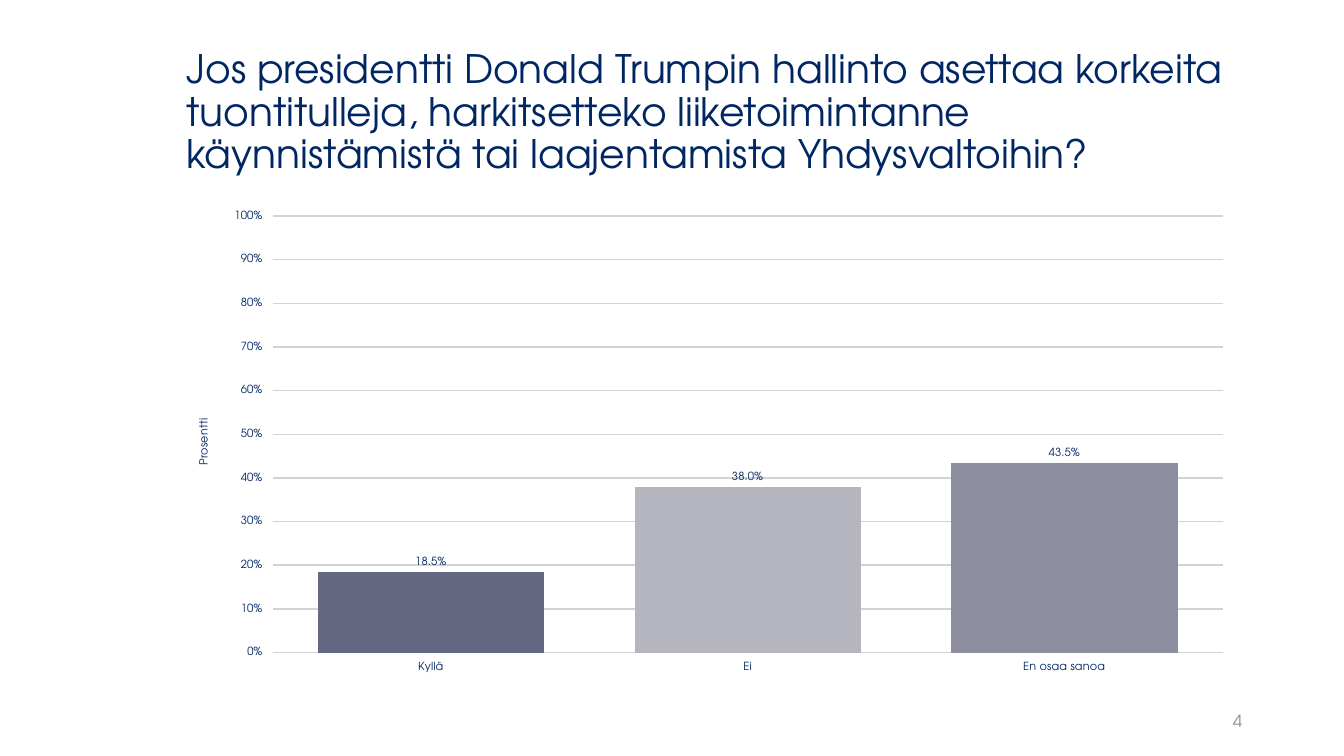
from dataclasses import dataclass
from lxml.etree import SubElement
from pptx import Presentation
from pptx.chart.data import CategoryChartData as ChartData
from pptx.dml.color import RGBColor as RGB
from pptx.enum.chart import XL_CHART_TYPE as Kind, XL_LABEL_POSITION as Spot
from pptx.enum.text import MSO_ANCHOR as Anchor, MSO_AUTO_SIZE as Fit, PP_ALIGN as Align
from pptx.oxml.ns import qn
from pptx.util import Inches, Pt

TITLE = ("Jos presidentti Donald Trumpin hallinto asettaa korkeita tuontitulleja, "
         "harkitsetteko liiketoimintanne käynnistämistä tai laajentamista Yhdysvaltoihin?")
AXIS = "Prosentti"
PAGE = "4"
ANSWERS = [("Kyllä", 0.185, "646883"), ("Ei", 0.38, "B4B5BF"), ("En osaa sanoa", 0.435, "8C8E9F")]
PLOT = {"x": 0.09, "y": 0.03, "w": 0.89, "h": 0.91}
LEFT, WIDTH = 1.75, 10.59


@dataclass(frozen=True)
class Theme:
    """Colours, font and type sizes."""
    font: str = "TeX Gyre Adventor"
    navy: str = "002663"
    gray: str = "8C8E9F"
    grid: str = "D3D3D3"
    head: int = 28
    page: int = 12
    label: int = 8


LOOK = Theme()


def style(font, size, color):
    """Set the face, size and colour of a font."""
    font.name, font.size, font.bold = LOOK.font, Pt(size), False
    font.color.rgb = RGB.from_string(color)


def write(box, text, size, color, align):
    """Fill a text shape with one paragraph."""
    frame = box.text_frame
    frame.text, frame.word_wrap = text, True
    frame.auto_size, frame.vertical_anchor = Fit.NONE, Anchor.MIDDLE
    para = frame.paragraphs[0]
    para.alignment = align
    style(para.font, size, color)
    return para


def place(chart):
    """Fix the inner plot area as shares of the chart."""
    area = chart._chartSpace.chart.plotArea
    for old in area.findall(qn("c:layout")):
        area.remove(old)
    layout = SubElement(area, qn("c:layout"))
    area.insert(0, layout)
    manual = SubElement(layout, qn("c:manualLayout"))
    modes = {"layoutTarget": "inner", "xMode": "edge", "yMode": "edge"}
    for tag, val in {**modes, **PLOT}.items():
        SubElement(manual, qn(f"c:{tag}")).set("val", str(val))


def draw(slide):
    """Add the column chart of answers."""
    names, shares, fills = zip(*ANSWERS)
    data = ChartData()
    data.categories = names
    data.add_series("Series 1", shares)
    chart = slide.shapes.add_chart(Kind.COLUMN_CLUSTERED, Inches(LEFT), Inches(2),
                                   Inches(WIDTH), Inches(4.76), data).chart
    chart.has_legend = chart.has_title = False
    style(chart.font, LOOK.label, LOOK.navy)
    for axis in (chart.category_axis, chart.value_axis):
        style(axis.tick_labels.font, LOOK.label, LOOK.navy)
        axis.format.line.fill.background()
    axis = chart.value_axis
    axis.minimum_scale, axis.maximum_scale, axis.major_unit = 0, 1, 0.1
    axis.tick_labels.number_format = "0%"
    axis.tick_labels.number_format_is_linked = False
    line = axis.major_gridlines.format.line
    line.width = Pt(1)
    line.color.rgb = RGB.from_string(LOOK.grid)
    frame = axis.axis_title.text_frame
    frame.text = AXIS
    style(frame.paragraphs[0].font, LOOK.label, LOOK.navy)

    plot = chart.plots[0]
    plot.gap_width, plot.overlap, plot.vary_by_categories = 40, -2, False
    plot.has_data_labels = True
    labels = plot.data_labels
    labels.show_value, labels.position = True, Spot.OUTSIDE_END
    labels.number_format, labels.number_format_is_linked = "0.0%", False
    style(labels.font, LOOK.label, LOOK.navy)
    for i, color in enumerate(fills):
        fill = plot.series[0].points[i].format.fill
        fill.solid()
        fill.fore_color.rgb = RGB.from_string(color)
    place(chart)


def main():
    """Build and save the slide."""
    deck = Presentation()
    deck.slide_width, deck.slide_height = Inches(13.33), Inches(7.5)
    slide = deck.slides.add_slide(deck.slide_layouts[5])
    title = slide.shapes.title
    title.left, title.top = Inches(LEFT), Inches(0.4)
    title.width, title.height = Inches(WIDTH), Inches(1.45)
    write(title, TITLE, LOOK.head, LOOK.navy, Align.LEFT).line_spacing = 0.9
    draw(slide)
    page = slide.shapes.add_textbox(Inches(9.42), Inches(6.95), Inches(3), Inches(0.4))
    write(page, PAGE, LOOK.page, LOOK.gray, Align.RIGHT).space_after = Pt(6)
    deck.save("out.pptx")


if __name__ == "__main__":
    main()
